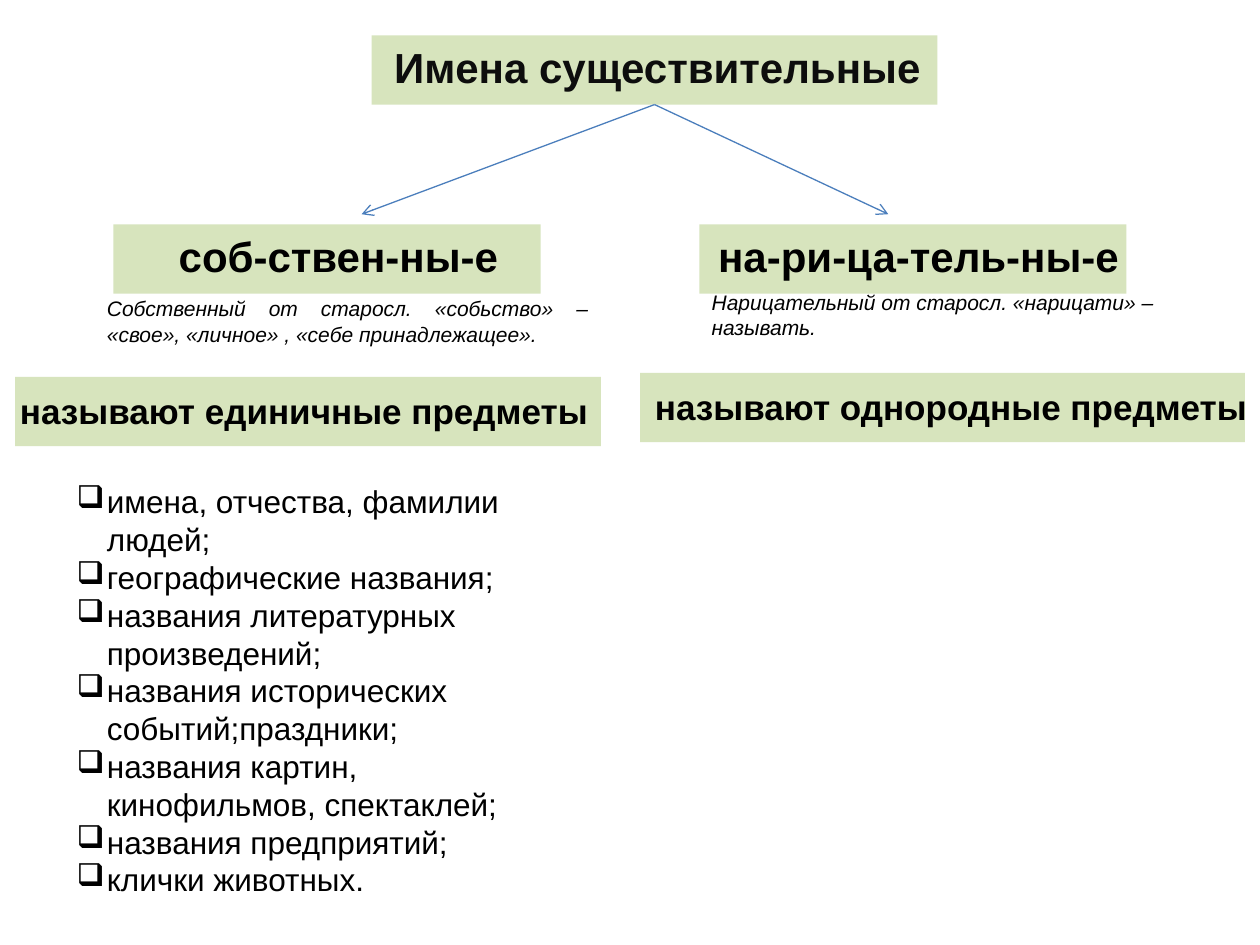
from lxml.etree import SubElement
from pptx import Presentation
from pptx.dml.color import RGBColor
from pptx.enum.shapes import MSO_CONNECTOR as Connector, MSO_SHAPE as Shape
from pptx.enum.text import PP_ALIGN as Align
from pptx.oxml.ns import qn
from pptx.util import Inches, Pt


def color(hex_string):
    return RGBColor.from_string(hex_string)


def add_text(left, top, width, height, lines, size, ink="000000",
             bold=False, italic=False, align=Align.LEFT):
    """Add a wrapped text box with one paragraph per line and return its paragraphs."""
    box = slide.shapes.add_textbox(Inches(left), Inches(top), Inches(width), Inches(height))
    frame = box.text_frame
    frame.word_wrap = True
    for index, line in enumerate(lines):
        para = frame.add_paragraph() if index else frame.paragraphs[0]
        para.alignment = align
        span = para.add_run()
        span.text = line
        font = span.font
        font.name, font.size = "Arial", Pt(size)
        font.bold, font.italic = bold, italic
        font.color.rgb = color(ink)
    return frame.paragraphs


deck = Presentation()
deck.slide_width, deck.slide_height = Inches(10), Inches(7.5)
slide = deck.slides.add_slide(deck.slide_layouts[6])

# Green bars: left, top, width; the title bar comes first
bars = []
for left, top, width in [
    (2.95, 0.28, 4.49),
    (0.9, 1.78, 3.39),
    (5.55, 1.78, 3.39),
    (0.12, 2.99, 4.65),
    (5.08, 2.96, 4.8),
]:
    bar = slide.shapes.add_shape(Shape.RECTANGLE, Inches(left), Inches(top),
                                 Inches(width), Inches(0.55))
    bar.shadow.inherit = False
    bar.fill.solid()
    bar.fill.fore_color.rgb = color("D7E4BD")
    bar.line.fill.background()
    bars.append(bar)

# Arrows from the title to the two classes of nouns
for end_left in (2.87, 7.05):
    arrow = slide.shapes.add_connector(Connector.STRAIGHT, Inches(5.2), Inches(0.83),
                                       Inches(end_left), Inches(1.7))
    arrow.begin_connect(bars[0], 2)
    arrow.line.color.rgb = color("4B7EBC")
    arrow.line.width = Pt(0.75)
    properties = arrow.element.spPr
    SubElement(properties.find(qn("a:ln")), qn("a:tailEnd"), type="arrow")
    SubElement(properties, qn("a:effectLst"))

# Headings on the bars
add_text(3.03, 0.28, 4.96, 0.51, ["Имена существительные"], 24, ink="0D0D0D", bold=True)
add_text(1.32, 1.78, 2.97, 0.51, ["соб-ствен-ны-е"], 24, bold=True)
add_text(5.49, 1.78, 3.6, 0.51, ["на-ри-ца-тель-ны-е"], 24, bold=True, align=Align.CENTER)
add_text(0.06, 3.04, 4.94, 0.46, ["называют единичные предметы"], 20, bold=True)
add_text(5.1, 3.01, 4.94, 0.46, ["называют однородные предметы"], 20, bold=True)

# Origins of the two terms
add_text(0.75, 2.3, 4.02, 0.51,
         ["Собственный от старосл. «собьство» – «свое», «личное» , «себе принадлежащее»."],
         12, italic=True, align=Align.JUSTIFY)
add_text(5.55, 2.25, 3.78, 0.51,
         ["Нарицательный от старосл. «нарицати» – называть."], 12, italic=True)

# Kinds of proper nouns
kinds = [
    "имена, отчества, фамилии людей;",
    "географические названия;",
    "названия литературных произведений;",
    "названия исторических событий;праздники;",
    "названия картин, кинофильмов, спектаклей;",
    "названия предприятий;",
    "клички животных.",
]
hanging = Inches(0.24)
for para in add_text(0.51, 3.78, 4.02, 3.43, kinds, 18):
    settings = para._p.get_or_add_pPr()
    settings.set("marL", str(hanging))
    settings.set("indent", str(-hanging))
    SubElement(settings, qn("a:buChar"), char="❑")

deck.save("out.pptx")
